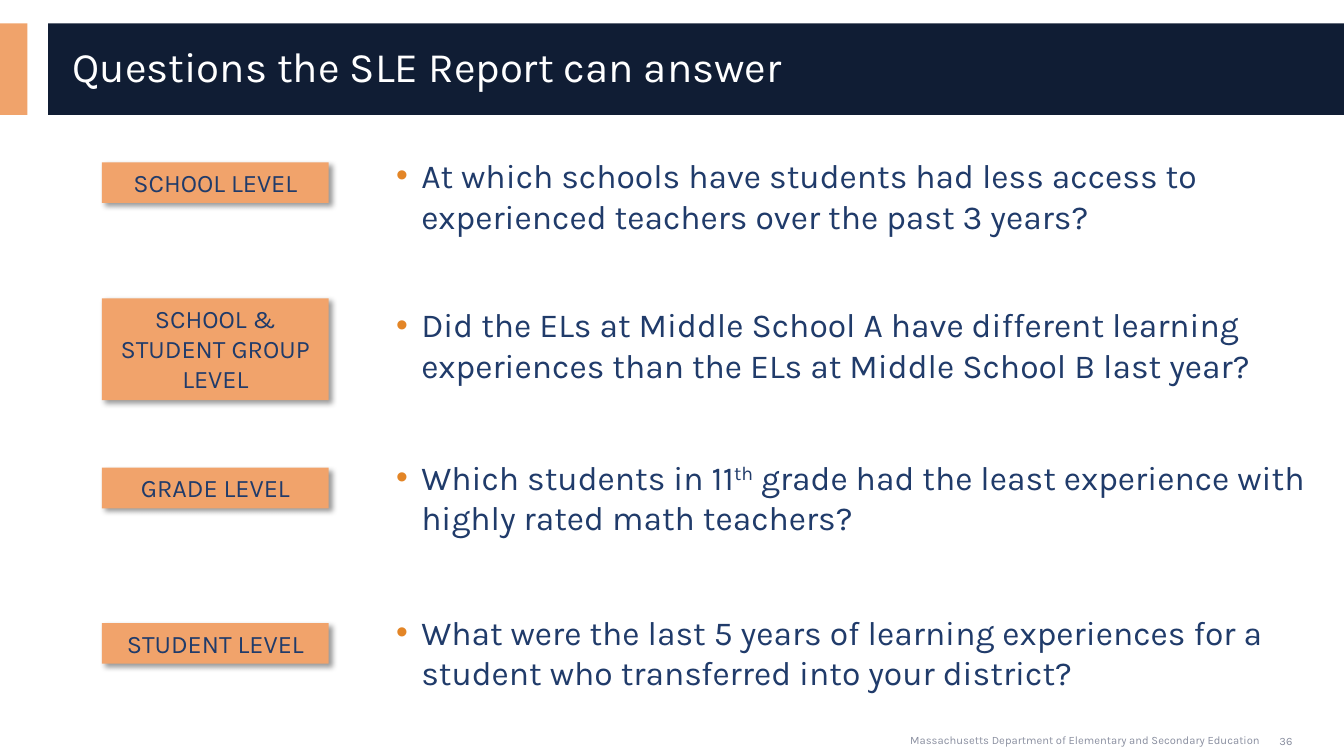
from lxml import etree
from pptx import Presentation
from pptx.dml.color import RGBColor
from pptx.enum import shapes, text
from pptx.oxml import ns
from pptx.util import Pt

FONT = "Karla"
INK = {
    "navy": "101D34",
    "blue": "203B6A",
    "peach": "F0A36B",
    "tag": "F1A36B",
    "dot": "E38526",
    "grey": "8A8FA0",
    "white": "FFFFFF",
    "black": "000000",
}
# tag, tag top, tag height, question runs (every second one raised), question top, height
ROWS = [
    ("SCHOOL LEVEL", 115.9, 29.1,
     ["At which schools have students had less access to experienced teachers "
      "over the past 3 years?"], 107.3, 73),
    ("SCHOOL & STUDENT GROUP LEVEL", 213.1, 72.7,
     ["Did the ELs at Middle School A have different learning experiences "
      "than the ELs at Middle School B last year?"], 213.8, 73),
    ("GRADE LEVEL", 334.1, 29.1,
     ["Which students in 11", "th",
      " grade had the least experience with highly rated math teachers?"], 322.6, 76),
    ("STUDENT LEVEL", 445, 29.1,
     ["What were the last 5 years of learning experiences for a student "
      "who transferred into your district?"], 433.4, 76),
]


def add(node, tag, **attrs):
    return etree.SubElement(node, ns.qn(tag), attrs)


def paint(font, size, color):
    font.name = FONT
    font.size = Pt(size)
    font.color.rgb = RGBColor.from_string(INK[color])


def write(shape, runs, size, color, align=text.PP_ALIGN.LEFT, anchor=text.MSO_ANCHOR.TOP):
    """Fill a shape with one paragraph; every second run is superscript."""
    frame = shape.text_frame
    frame.word_wrap = True
    frame.vertical_anchor = anchor
    para = frame.paragraphs[0]
    para.alignment = align
    for i, words in enumerate(runs):
        run = para.add_run()
        run.text = words
        paint(run.font, size, color)
        if i % 2:
            run._r.get_or_add_rPr().set("baseline", "30000")
    return para


def label(slide, box, *args, **opts):
    return write(slide.shapes.add_textbox(*map(Pt, box)), *args, **opts)


def block(slide, box, color):
    shape = slide.shapes.add_shape(shapes.MSO_SHAPE.RECTANGLE, *map(Pt, box))
    shape.shadow.inherit = False
    shape.fill.solid()
    shape.fill.fore_color.rgb = RGBColor.from_string(INK[color])
    shape.line.fill.background()
    return shape


def shade(shape):
    """Cast a soft shadow down and to the right."""
    effects = shape._element.spPr.find(ns.qn("a:effectLst"))
    outer = add(effects, "a:outerShdw", blurRad=str(Pt(4)), dist=str(Pt(3)),
                dir=str(45 * 60000), algn="tl", rotWithShape="0")
    color = add(outer, "a:srgbClr", val=INK["black"])
    add(color, "a:alpha", val="40000")


def bullet(para):
    props = para._p.get_or_add_pPr()
    props.set("marL", str(Pt(18)))
    props.set("indent", str(-Pt(18)))
    add(add(props, "a:buClr"), "a:srgbClr", val=INK["dot"])
    add(props, "a:buFont", typeface="Arial")
    add(props, "a:buChar", char="•")


def header(slide, x, y, w, h, title):
    block(slide, (x, y, 19.6, h), "peach")
    bar = x + 34.3
    block(slide, (bar, y, w - bar, h), "navy")
    para = label(slide, (bar + 10.3, y + 6.2, 896, 53.3), [title], 30, "white",
                 anchor=text.MSO_ANCHOR.MIDDLE)
    para.line_spacing = 0.9


def row(slide, x, w, tag, top, high, runs, start, tall):
    """Place a level tag and, to its right, its question."""
    shape = block(slide, (x, top, 162, high), "tag")
    shade(shape)
    write(shape, [tag], 18, "blue", text.PP_ALIGN.CENTER)
    left = x + 203
    bullet(label(slide, (left, start, x + w - left, tall), runs, 24, "blue"))


def footer(slide, x, y, w, h, name, page):
    label(slide, (x, y + 5.8, w, 17), [name], 8, "grey")
    label(slide, (x + w - 36, y, 36, h), [page], 8, "grey",
          text.PP_ALIGN.RIGHT, text.MSO_ANCHOR.MIDDLE)


def main():
    deck = Presentation()
    deck.slide_width, deck.slide_height = Pt(960), Pt(540)
    slide = deck.slides.add_slide(deck.slide_layouts[6])
    header(slide, 0, 16.6, 960, 65.5, "Questions the SLE Report can answer")
    for item in ROWS:
        row(slide, 72.8, 873.3, *item)
    footer(slide, 643, 514.8, 287.3, 28.8,
           "Massachusetts Department of Elementary and Secondary Education", "36")
    deck.save("out.pptx")


if __name__ == "__main__":
    main()
